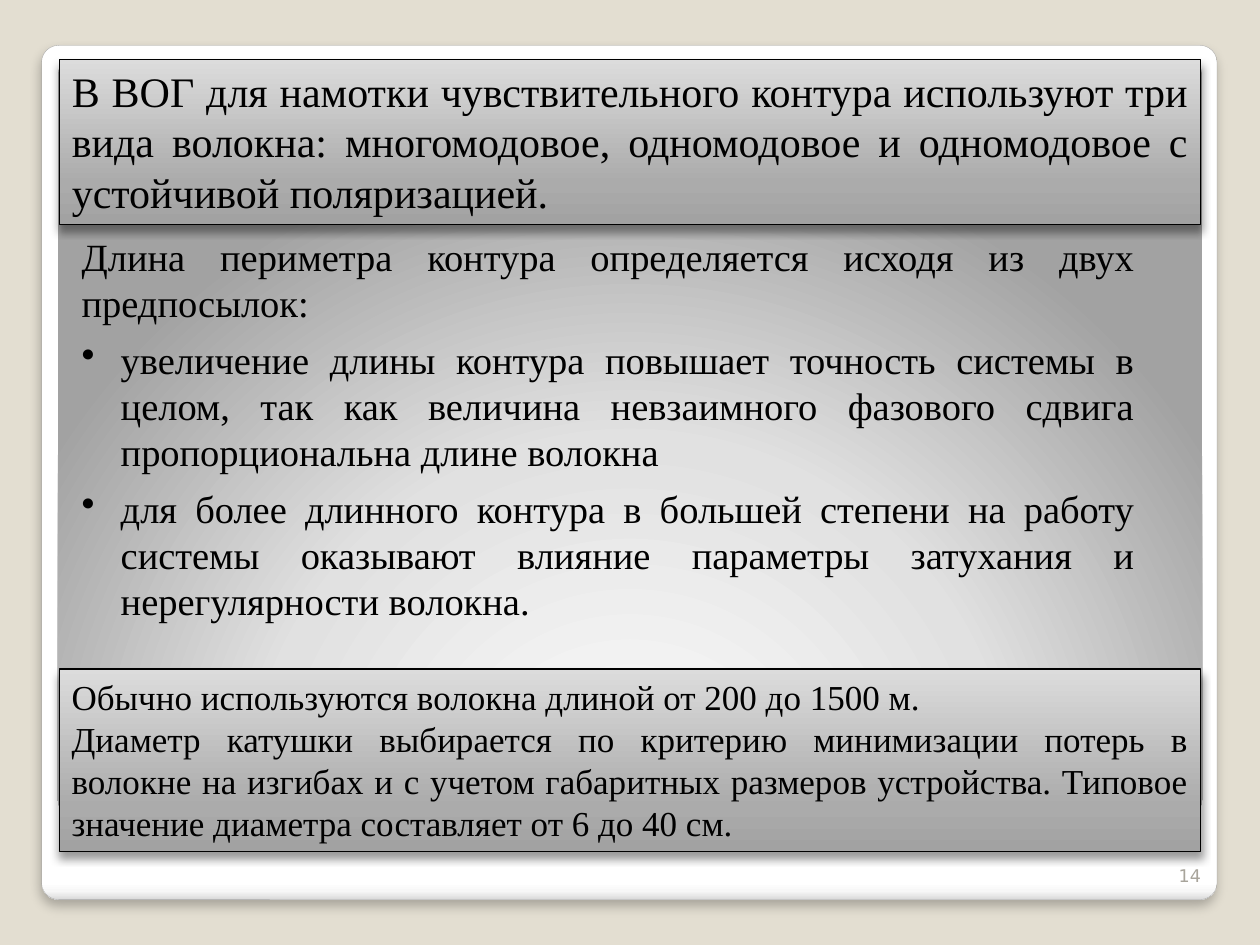
from pptx import Presentation
from pptx.util import Inches, Pt
from pptx.dml.color import RGBColor
from pptx.enum.shapes import MSO_SHAPE
from pptx.enum.text import MSO_ANCHOR, MSO_AUTO_SIZE, PP_ALIGN
from pptx.oxml import parse_xml
from pptx.oxml.ns import nsdecls
from lxml.etree import SubElement

HEAD = ["В ВОГ для намотки чувствительного контура используют три вида волокна: "
        "многомодовое, одномодовое и одномодовое с устойчивой поляризацией."]
LEAD = "Длина периметра контура определяется исходя из двух предпосылок:"
POINTS = [
    "увеличение длины контура повышает точность системы в целом, так как величина "
    "невзаимного фазового сдвига пропорциональна длине волокна",
    "для более длинного контура в большей степени на работу системы оказывают "
    "влияние параметры затухания и нерегулярности волокна.",
]
NOTES = [
    "Обычно используются волокна длиной от 200 до 1500 м.",
    "Диаметр катушки выбирается по критерию минимизации потерь в волокне на изгибах "
    "и с учетом габаритных размеров устройства. Типовое значение диаметра "
    "составляет от 6 до 40 см.",
]
NUMBER = "14"

THEME = {
    "font": "Times New Roman", "small": "DejaVu Sans",
    "ink": "000000", "mute": "A8A49B", "edge": "A4A4A4", "back": "E3DED1",
    "head": 24, "body": 22, "note": 20, "num": 10,
    "card": [(0, "FFFFFF"), (98, "FFFFFF"), (99, "F7F7F7"), (100, "DADADA")],
    "glow": [(0, "FFFFFF"), (55, "E1E1E1"), (100, "A2A2A2")],
    "steel": [(0, "A2A2A2"), (25, "ABABAB"), (100, "DCDCDC")],
}
LINEAR = '<a:lin ang="{}" scaled="0"/>'
RADIAL = ('<a:path path="circle"><a:fillToRect l="50000" t="175000" '
          'r="50000" b="-75000"/></a:path>')
LEFT, WIDE = 0.47, 9.06
HANG = Inches(0.31)


def place(shape, *box):
    shape.left, shape.top, shape.width, shape.height = map(Inches, box)


def shade(shape, stops, way):
    """Fill with a gradient; way is the XML of its direction."""
    shape.fill.background()
    marks = "".join(f'<a:gs pos="{pos * 1000}"><a:srgbClr val="{tint}"/></a:gs>'
                    for pos, tint in stops)
    grad = parse_xml(f'<a:gradFill {nsdecls("a")} rotWithShape="1">'
                     f'<a:gsLst>{marks}</a:gsLst>{way}</a:gradFill>')
    props = shape.fill._xPr
    props.replace(props.find("{*}noFill"), grad)


def outline(shape, tint, width):
    shape.line.color.rgb = RGBColor.from_string(tint)
    shape.line.width = Pt(width)


def drop(shape, alpha, blur, dist):
    """Cast a black shadow straight down."""
    shape.shadow.inherit = False
    effects = shape._element.spPr.find("{*}effectLst")
    effects.append(parse_xml(
        f'<a:outerShdw {nsdecls("a")} blurRad="{Pt(blur)}" dist="{Pt(dist)}" '
        f'dir="5400000" algn="t" rotWithShape="0"><a:srgbClr val="000000">'
        f'<a:alpha val="{alpha * 1000}"/></a:srgbClr></a:outerShdw>'))


def write(shape, lines, size, font="font", ink="ink", align=PP_ALIGN.JUSTIFY,
          anchor=MSO_ANCHOR.TOP, fit=MSO_AUTO_SIZE.SHAPE_TO_FIT_TEXT):
    frame = shape.text_frame
    frame.text = "\n".join(lines)
    frame.word_wrap = True
    frame.auto_size = fit
    frame.vertical_anchor = anchor
    for para in frame.paragraphs:
        para.alignment = align
        for run in para.runs:
            run.font.name = THEME[font]
            run.font.size = Pt(THEME[size])
            run.font.color.rgb = RGBColor.from_string(THEME[ink])
    return frame.paragraphs


def bullet(para):
    props = para._p.get_or_add_pPr()
    props.set("marL", str(HANG))
    props.set("indent", str(-HANG))
    SubElement(props, props.tag.replace("pPr", "buChar"), char="•")


def card(shapes, *box):
    shape = shapes.add_shape(MSO_SHAPE.ROUNDED_RECTANGLE, *map(Inches, box))
    shape.adjustments[0] = 0.02
    shape.shadow.inherit = False
    return shape


def plate(shape, top, tall, lines, size):
    """Style a steel-grey framed box and fill in its text."""
    place(shape, LEFT, top, WIDE, tall)
    shade(shape, THEME["steel"], LINEAR.format(270 * 60000))
    outline(shape, THEME["ink"], 0.75)
    drop(shape, 40, 5.2, 3)
    write(shape, lines, size)


def main():
    deck = Presentation()
    deck.slide_width, deck.slide_height = Inches(10), Inches(7.5)
    slide = deck.slides.add_slide(deck.slide_layouts[5])
    shapes = slide.shapes
    back = slide.background.fill
    back.solid()
    back.fore_color.rgb = RGBColor.from_string(THEME["back"])

    frame = card(shapes, 0.33, 0.36, 9.33, 6.78)
    shade(frame, THEME["card"], LINEAR.format(90 * 60000))
    outline(frame, THEME["edge"], 0.16)
    drop(frame, 25, 6, 4)

    panel = card(shapes, 0.46, 0.47, 9.08, 6)
    shade(panel, THEME["glow"], RADIAL)
    panel.line.fill.background()

    number = shapes.add_textbox(0, 0, 0, 0)
    place(number, 9.13, 6.68, 0.5, 0.4)
    write(number, [NUMBER], "num", "small", "mute", PP_ALIGN.RIGHT,
          MSO_ANCHOR.BOTTOM, MSO_AUTO_SIZE.NONE)

    title = shapes.title
    shapes._spTree.append(title._element)  # bring in front of the panel
    plate(title, 0.47, 1.31, HEAD, "head")

    body = shapes.add_textbox(0, 0, 0, 0)
    place(body, 0.55, 1.8, 8.55, 3.23)
    paras = write(body, [LEAD] + POINTS, "body")
    for para in paras:
        para.space_after = Pt(6)
    for para in paras[1:]:
        bullet(para)

    notes = shapes.add_shape(MSO_SHAPE.RECTANGLE, 0, 0, 0, 0)
    plate(notes, 5.31, 1.45, NOTES, "note")

    deck.save("out.pptx")


if __name__ == "__main__":
    main()
